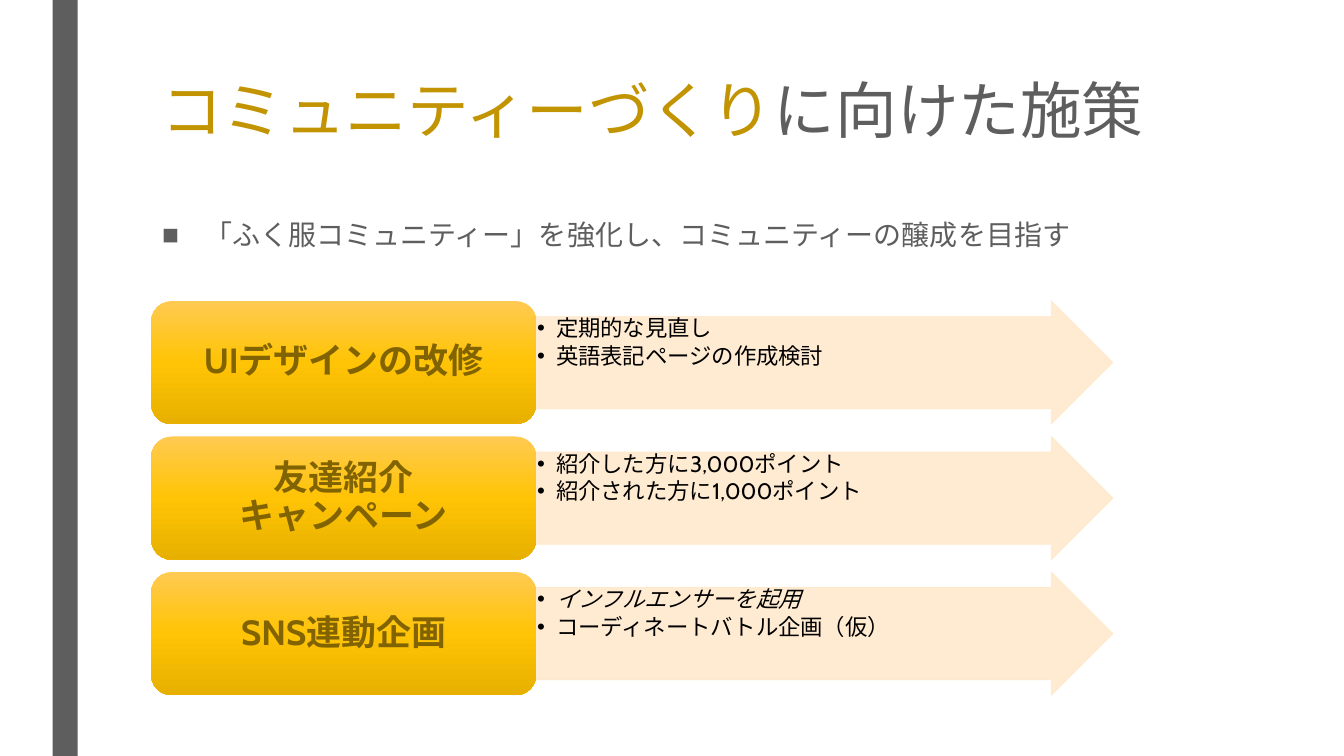
import pptx
import pptx.util
import pptx.dml.color
import pptx.enum.lang
import pptx.enum.shapes
import pptx.enum.text
import pptx.oxml
import pptx.oxml.ns
import lxml.etree

Pt = pptx.util.Pt
Shapes = pptx.enum.shapes.MSO_SHAPE
Anchor = pptx.enum.text.MSO_ANCHOR
Align = pptx.enum.text.PP_ALIGN

FONT = "Cabin"
GRAY, GOLD, BROWN, BLACK, CREAM = "5E5E5E", "C29401", "816301", "000000", "FFE9CC"
LABEL_GRADIENT = [(0, "FFCA51"), (50, "FFC405"), (100, "E7B000")]
TITLE = [("コミュニティーづくり", GOLD), ("に向けた施策", GRAY)]
SUMMARY = "「ふく服コミュニティー」を強化し、コミュニティーの醌成を目指す".replace("醌", "醸")
SUMMARY = "「ふく服コミュニティー」を強化し、コミュニティーの醸成を目指す"
MEASURES = [
    ("UIデザインの改修", [("定期的な見直し", False), ("英語表記ページの作成検討", False)]),
    ("友達紹介\nキャンペーン", [("紹介した方に3,000ポイント", False), ("紹介された方に1,000ポイント", False)]),
    ("SNS連動企画", [("インフルエンサーを起用", True), ("コーディネートバトル企画（仮）", False)]),
]

ROW_TOP, ROW_STEP, ROW_HEIGHT = 215, 96.8, 88
LABEL_LEFT, LABEL_WIDTH = 108, 275
ARROW_LEFT, ARROW_WIDTH = LABEL_LEFT + LABEL_WIDTH, 412
SHAFT = 0.75
LABEL_INSET = 4.3


def color(value):
    return pptx.dml.color.RGBColor.from_string(value)


def child(parent, tag, **attributes):
    return lxml.etree.SubElement(parent, pptx.oxml.ns.qn(tag), attributes)


def add_shape(page, kind, left, top, width, height, fill):
    shape = page.shapes.add_shape(kind, Pt(left), Pt(top), Pt(width), Pt(height))
    shape.shadow.inherit = False
    shape.fill.solid()
    shape.fill.fore_color.rgb = color(fill)
    shape.line.fill.background()
    return shape


def add_box(page, left, top, width, height, insets=(7.2, 3.6), anchor=Anchor.TOP):
    frame = page.shapes.add_textbox(Pt(left), Pt(top), Pt(width), Pt(height)).text_frame
    frame.word_wrap = True
    frame.vertical_anchor = anchor
    frame.margin_left = frame.margin_right = Pt(insets[0])
    frame.margin_top = frame.margin_bottom = Pt(insets[1])
    return frame


def write(para, text, *, size, ink, bold=False, italic=False, spacing=0.9,
          before=0, after=0, align=Align.LEFT, bullet=None, indent=0):
    para.alignment = align
    para.line_spacing = spacing
    para.space_before, para.space_after = Pt(before), Pt(after)
    for number, line in enumerate(text.split("\n")):
        if number:
            para.add_line_break()
        span = para.add_run()
        span.text = line
        font = span.font
        font.name, font.size, font.bold, font.italic = FONT, Pt(size), bold, italic
        font.color.rgb = color(ink)
        font.language_id = pptx.enum.lang.MSO_LANGUAGE_ID.JAPANESE
        child(font._element, "a:ea", typeface=FONT)
    if bullet:
        properties = para._p.get_or_add_pPr()
        properties.set("marL", str(Pt(indent)))
        properties.set("indent", str(-Pt(indent)))
        child(properties, "a:buFont", typeface="Arial")
        child(properties, "a:buChar", char=bullet)


def fill_gradient(shape, stops):
    shape.fill.gradient()
    shape.fill.gradient_angle = 270
    stop_list = shape._element.spPr.find(".//" + pptx.oxml.ns.qn("a:gsLst"))
    for stop in list(stop_list):
        stop_list.remove(stop)
    for position, value in stops:
        stop = child(stop_list, "a:gs", pos=str(position * 1000))
        child(stop, "a:srgbClr", val=value)


def add_arrow(page, top):
    arrow = add_shape(page, Shapes.RIGHT_ARROW, ARROW_LEFT, top, ARROW_WIDTH, ROW_HEIGHT, CREAM)
    arrow.adjustments[0], arrow.adjustments[1] = SHAFT, 0.5
    arrow.line.color.rgb = color(CREAM)
    arrow.line.width = Pt(0.5)
    for paint in arrow._element.spPr.iter(pptx.oxml.ns.qn("a:srgbClr")):
        child(paint, "a:alpha", val="90000")


def add_measure(page, top, label, points):
    add_arrow(page, top)
    frame = add_box(page, ARROW_LEFT, top + ROW_HEIGHT * (1 - SHAFT) / 2,
                    ARROW_WIDTH - ROW_HEIGHT * SHAFT / 2, ROW_HEIGHT * SHAFT, insets=(0.7, 0.7))
    for number, (text, italic) in enumerate(points):
        para = frame.add_paragraph() if number else frame.paragraphs[0]
        write(para, text, size=16, ink=BLACK, italic=italic, after=2.4, bullet="•", indent=13.5)
    plate = add_shape(page, Shapes.ROUNDED_RECTANGLE, LABEL_LEFT, top, LABEL_WIDTH, ROW_HEIGHT, CREAM)
    fill_gradient(plate, LABEL_GRADIENT)
    frame = add_box(page, LABEL_LEFT + LABEL_INSET, top + LABEL_INSET, LABEL_WIDTH - 2 * LABEL_INSET,
                    ROW_HEIGHT - 2 * LABEL_INSET, anchor=Anchor.MIDDLE)
    write(frame.paragraphs[0], label, size=25, ink=BROWN, bold=True, after=8.75, align=Align.CENTER)


def main():
    deck = pptx.Presentation()
    deck.slide_width, deck.slide_height = Pt(960), Pt(540)
    page = deck.slides.add_slide(deck.slide_layouts[6])
    add_shape(page, Shapes.RECTANGLE, 37.5, 0, 18, 540, GRAY)
    title = add_box(page, 108, 54, 756, 117).paragraphs[0]
    for text, ink in TITLE:
        write(title, text, size=44, ink=ink, spacing=0.89)
    summary = add_box(page, 108.7, 154, 675, 49).paragraphs[0]
    write(summary, SUMMARY, size=20, ink=GRAY, spacing=0.94, before=10, after=2, bullet="■", indent=30)
    for number, (label, points) in enumerate(MEASURES):
        add_measure(page, ROW_TOP + number * ROW_STEP, label, points)
    deck.save("out.pptx")


if __name__ == "__main__":
    main()
